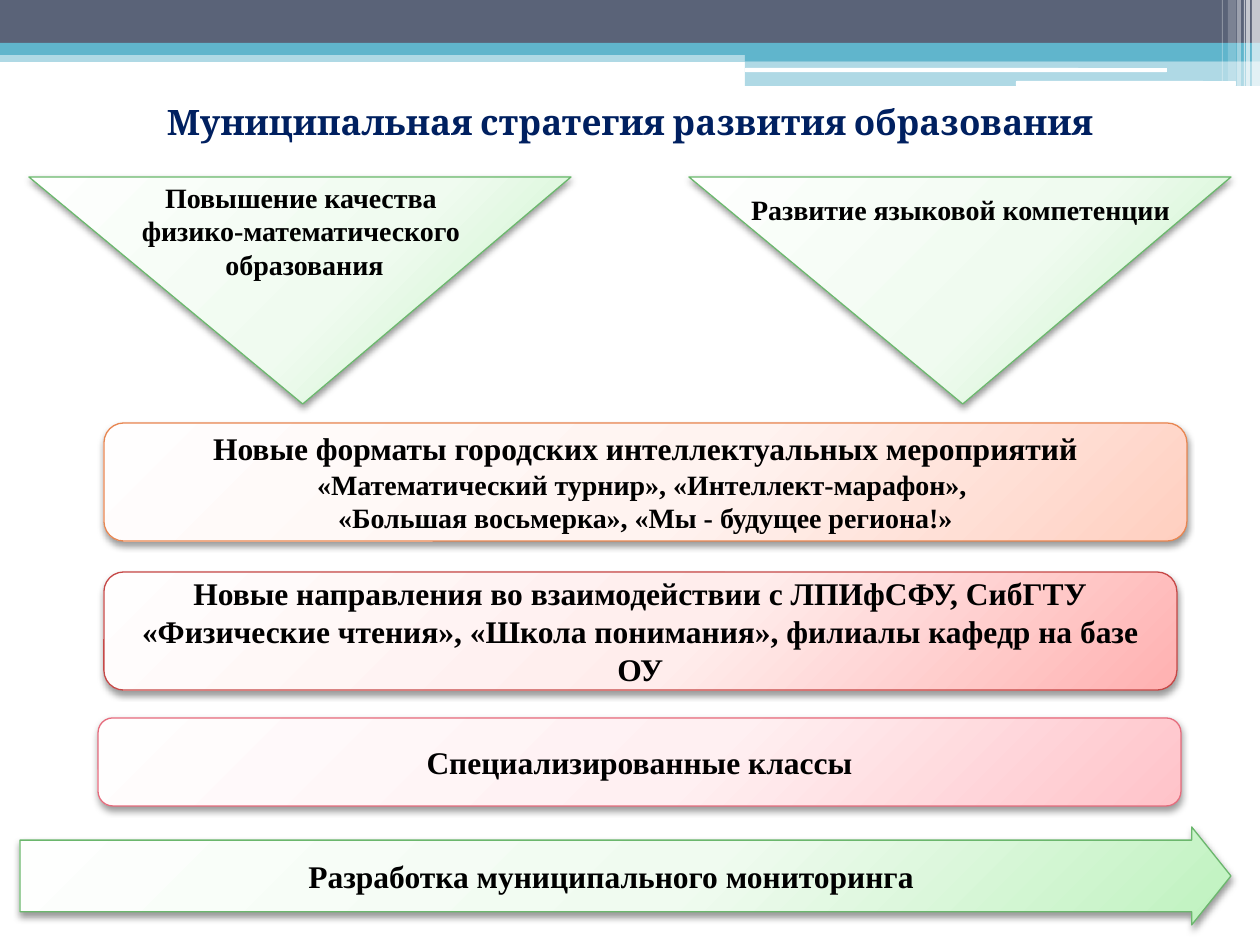
from lxml import etree
from pptx import Presentation
from pptx.dml.color import RGBColor
from pptx.enum.shapes import MSO_SHAPE as Shape
from pptx.enum.text import MSO_ANCHOR as Anchor, MSO_AUTO_SIZE as AutoSize, PP_ALIGN as Align
from pptx.oxml import parse_xml
from pptx.oxml.ns import nsdecls, qn
from pptx.util import Emu, Pt

PX = 914400 // 126
WHITE, SLATE, TEAL = "FFFFFF", "5A6378", "60B5CC"
SERIF = "Times New Roman"

TITLE = "Муниципальная стратегия развития образования"

# box (left, top, width, height), colour, opacity in percent
BANDS = [
    ((0, 50, 1260, 12), TEAL, 50),
    ((0, 0, 1260, 43), SLATE, 100),
    ((0, 43, 1260, 12), TEAL, 100),
    ((745, 49, 515, 12), TEAL, 100),
    ((745, 61, 515, 25), TEAL, 50),
]
BARS = [(745, 68, 422, 4), (1016, 81, 220, 5)]
# left, width, height, opacity
STRIPES = [(1252, 8, 86, 65), (1246, 4, 86, 65), (1244, 1, 86, 60),
           (1237, 4, 86, 40), (1228, 8, 81, 20), (1222, 1, 81, 30)]

# gradient start, middle, end, outline
GREEN = ("FEFFFE", "F0FBF0", "BFF2BF", "6BB76D")
ORANGE = ("FFFEFE", "FFF3F0", "FFCFC0", "E88651")
RED = ("FFFEFE", "FFEDEC", "FFB1B1", "C64847")
PINK = ("FFFEFE", "FFF0F2", "FFC3C9", "E66C7D")

# triangle left, caption box, caption lines
GOALS = [
    (29, (39, 174, 524, 115),
     ["Повышение качества", "физико-математического", " образования"]),
    (689, (725, 186, 471, 47), ["Развитие языковой компетенции"]),
]

# kind, box, palette, paragraphs; a paragraph is a list of (text, size)
MEASURES = [
    (Shape.ROUNDED_RECTANGLE, (104, 423, 1083, 118), ORANGE, [
        [("Новые форматы городских интеллектуальных мероприятий ", 18),
         ("«Математический турнир», «Интеллект-марафон», ", 16)],
        [("«Большая восьмерка», «Мы - будущее региона!»", 16)]]),
    (Shape.ROUNDED_RECTANGLE, (104, 572, 1073, 118), RED, [
        [("Новые направления во взаимодействии с ЛПИфСФУ, СибГТУ", 18)],
        [("«Физические чтения», «Школа понимания», филиалы кафедр на базе ОУ", 18)]]),
    (Shape.ROUNDED_RECTANGLE, (98, 718, 1083, 88), PINK,
     [[("Специализированные классы", 18)]]),
    (Shape.RIGHT_ARROW, (20, 827, 1211, 98), GREEN,
     [[("Разработка муниципального мониторинга", 18)]]),
]


def emu(box):
    return [Emu(value * PX) for value in box]


def rgb(value):
    return RGBColor.from_string(value)


def write(shape, paragraphs, font=SERIF, color="000000", anchor=Anchor.MIDDLE,
          fit=AutoSize.NONE):
    frame = shape.text_frame
    frame.word_wrap = True
    frame.auto_size = fit
    frame.vertical_anchor = anchor
    for index, runs in enumerate(paragraphs):
        paragraph = frame.add_paragraph() if index else frame.paragraphs[0]
        paragraph.alignment = Align.CENTER
        for text, size in runs:
            run = paragraph.add_run()
            run.text = text
            run.font.name, run.font.size, run.font.bold = font, Pt(size), True
            run.font.color.rgb = rgb(color)


def add_flat(shapes, box, color, opacity=100, kind=Shape.RECTANGLE):
    shape = shapes.add_shape(kind, *emu(box))
    shape.shadow.inherit = False
    shape.line.fill.background()
    shape.fill.solid()
    shape.fill.fore_color.rgb = rgb(color)
    if opacity < 100:
        tint = shape.element.spPr.find(".//" + qn("a:srgbClr"))
        etree.SubElement(tint, qn("a:alpha")).set("val", str(opacity * 1000))


def add_glossy(shapes, kind, box, palette):
    """Add a shape with a radial gradient, a thin outline and a soft shadow."""
    *shades, outline = palette
    shape = shapes.add_shape(kind, *emu(box))
    shape.line.color.rgb = rgb(outline)
    shape.line.width = Pt(0.75)
    shape.fill.solid()
    shape.shadow.inherit = False
    properties = shape.element.spPr
    stops = "".join(f'<a:gs pos="{place * 1000}"><a:srgbClr val="{shade}"/></a:gs>'
                    for place, shade in zip((0, 55, 100), shades))
    properties.replace(properties.find(qn("a:solidFill")), parse_xml(
        f'<a:gradFill {nsdecls("a")} rotWithShape="1"><a:gsLst>{stops}</a:gsLst>'
        '<a:path path="circle"><a:fillToRect l="-40000" t="-90000" r="140000" b="190000"/>'
        '</a:path></a:gradFill>'))
    properties.find(qn("a:effectLst")).append(parse_xml(
        f'<a:outerShdw {nsdecls("a")} blurRad="{Pt(4.1)}" dist="{Pt(2)}" dir="5400000" '
        'rotWithShape="0"><a:srgbClr val="000000"><a:alpha val="40000"/></a:srgbClr>'
        '</a:outerShdw>'))
    return shape


def main():
    deck = Presentation()
    deck.slide_width, deck.slide_height = emu((1260, 945))
    slide = deck.slides.add_slide(deck.slide_layouts[5])
    shapes = slide.shapes

    for box, color, opacity in BANDS:
        add_flat(shapes, box, color, opacity)
    for box in BARS:
        add_flat(shapes, box, WHITE, kind=Shape.ROUNDED_RECTANGLE)
    for left, width, height, opacity in STRIPES:
        add_flat(shapes, (left, 0, width, height), WHITE, opacity)

    title = shapes.title
    title.left, title.top, title.width, title.height = emu((0, 78, 1260, 88))
    write(title, [[(TITLE, 20)]], font="Cambria", color="002060")
    title.element.getparent().append(title.element)  # in front of the header bands

    for left, caption_box, lines in GOALS:
        goal = shapes.add_group_shape().shapes
        triangle = add_glossy(goal, Shape.ISOSCELES_TRIANGLE, (left, 177, 542, 227), GREEN)
        triangle.adjustments[0] = 0.495
        triangle.rotation = 180
        caption = goal.add_textbox(*emu(caption_box))
        write(caption, [[(line, 16)] for line in lines], anchor=Anchor.TOP,
              fit=AutoSize.SHAPE_TO_FIT_TEXT)

    for kind, box, palette, paragraphs in MEASURES:
        measure = add_glossy(shapes, kind, box, palette)
        if kind == Shape.RIGHT_ARROW:
            measure.adjustments[0], measure.adjustments[1] = 0.73, 0.4
        write(measure, paragraphs)

    deck.save("out.pptx")


if __name__ == "__main__":
    main()
